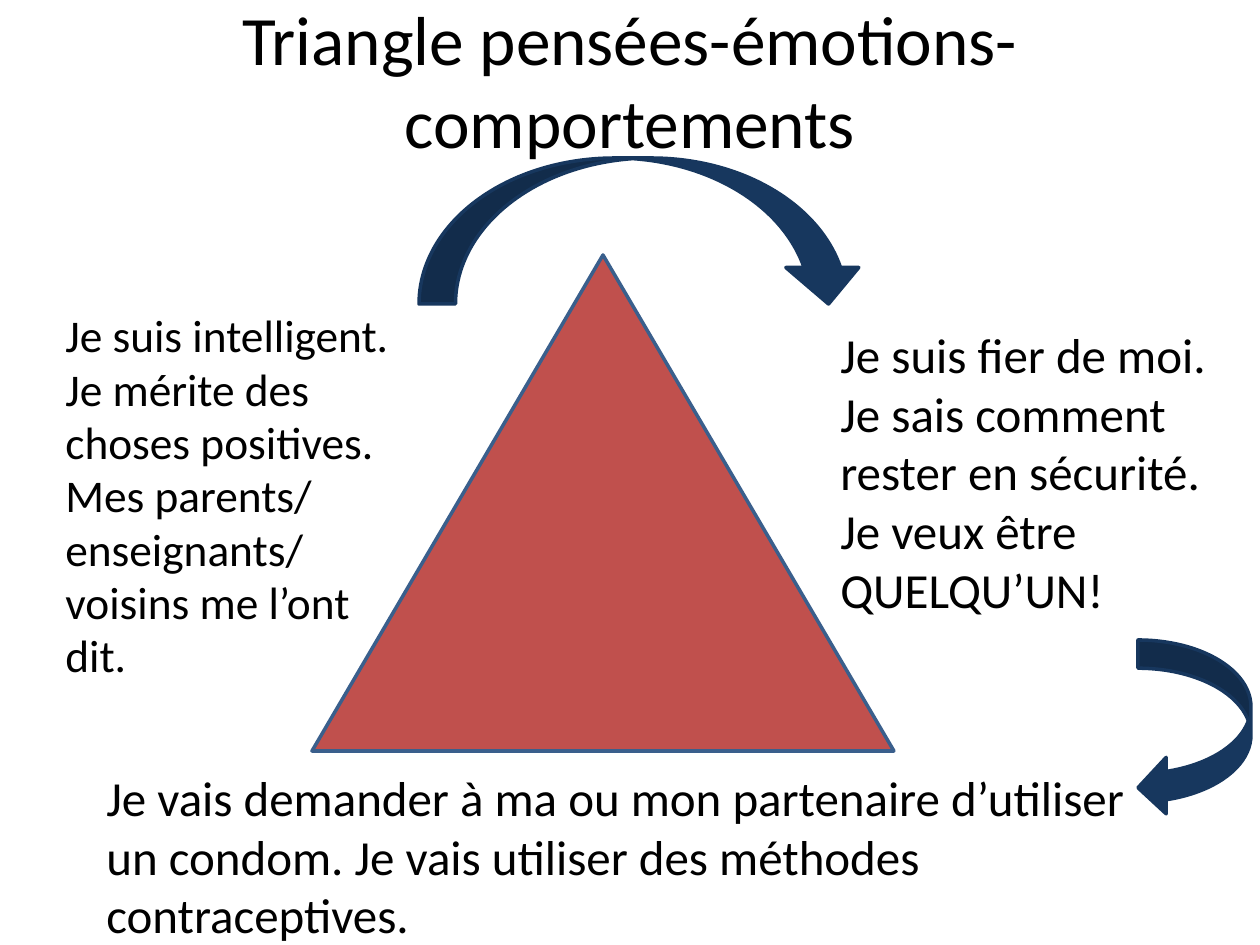
from pptx import Presentation
from pptx.dml.color import RGBColor
from pptx.enum.shapes import MSO_SHAPE
from pptx.enum.text import MSO_ANCHOR, PP_ALIGN
from pptx.util import Emu, Pt

TRIANGLE = MSO_SHAPE.ISOSCELES_TRIANGLE
ARROW_DOWN = MSO_SHAPE.CURVED_DOWN_ARROW
ARROW_LEFT = MSO_SHAPE.CURVED_LEFT_ARROW
TOP, MIDDLE = MSO_ANCHOR.TOP, MSO_ANCHOR.MIDDLE
LEFT, CENTER = PP_ALIGN.LEFT, PP_ALIGN.CENTER

BLACK = RGBColor(0x00, 0x00, 0x00)
RED = RGBColor(0xC0, 0x50, 0x4D)
BLUE = RGBColor(0x3A, 0x5F, 0x8C)
NAVY = RGBColor(0x17, 0x37, 0x5E)

FONT = "Calibri"
PX_PER_INCH = 126


def px(n):
    return Emu(round(n * 914400 / PX_PER_INCH))


def add_text(slide, box, text, size, align=LEFT, anchor=TOP, spacing=None):
    tf = slide.shapes.add_textbox(*map(px, box)).text_frame
    tf.word_wrap = True
    tf.vertical_anchor = anchor
    p = tf.paragraphs[0]
    p.text = text
    p.alignment = align
    p.line_spacing = spacing
    p.font.name = FONT
    p.font.size = Pt(size)
    p.font.color.rgb = BLACK


def add_figure(slide, box, kind, fill, line):
    sp = slide.shapes.add_shape(kind, *map(px, box))
    sp.shadow.inherit = False
    sp.fill.solid()
    sp.fill.fore_color.rgb = fill
    sp.line.color.rgb = line
    sp.line.width = Pt(2)


def add_cycle(slide, box):
    """Triangle, its three corner texts and the arrows between them."""
    x, y, w, h = box

    def within(left, top, width, height):
        return x + left, y + top, width, height

    add_figure(slide, within(312, 97, 582, 496), TRIANGLE, RED, BLUE)

    # Thoughts, emotions, behaviours
    add_text(slide, within(53, 146, 357, 447),
             "Je suis intelligent. Je mérite des choses positives. "
             "Mes parents/ enseignants/ voisins me l’ont dit.",
             25.9, spacing=0.98)
    add_text(slide, within(828, 160, 401, 310),
             "Je suis fier de moi. Je sais comment rester en sécurité. "
             "Je veux être QUELQU’UN!", 28)
    add_text(slide, within(94, h - 184, 1062, 184),
             "Je vais demander à ma ou mon partenaire d’utiliser un condom. "
             "Je vais utiliser des méthodes contraceptives.", 28)

    # Arrows: thoughts to emotions, emotions to behaviours
    add_figure(slide, within(419, 0, 446, 146), ARROW_DOWN, NAVY, NAVY)
    add_figure(slide, within(w - 122, 482, 113, 176), ARROW_LEFT, NAVY, NAVY)


def main():
    prs = Presentation()
    prs.slide_width, prs.slide_height = px(1260), px(945)
    slide = prs.slides.add_slide(prs.slide_layouts[6])

    # Title
    add_text(slide, (63, 0, 1134, 158),
             "Triangle pensées-émotions-comportements",
             39.6, CENTER, MIDDLE)

    add_cycle(slide, (0, 158, 1260, 787))
    prs.save("out.pptx")


if __name__ == "__main__":
    main()
